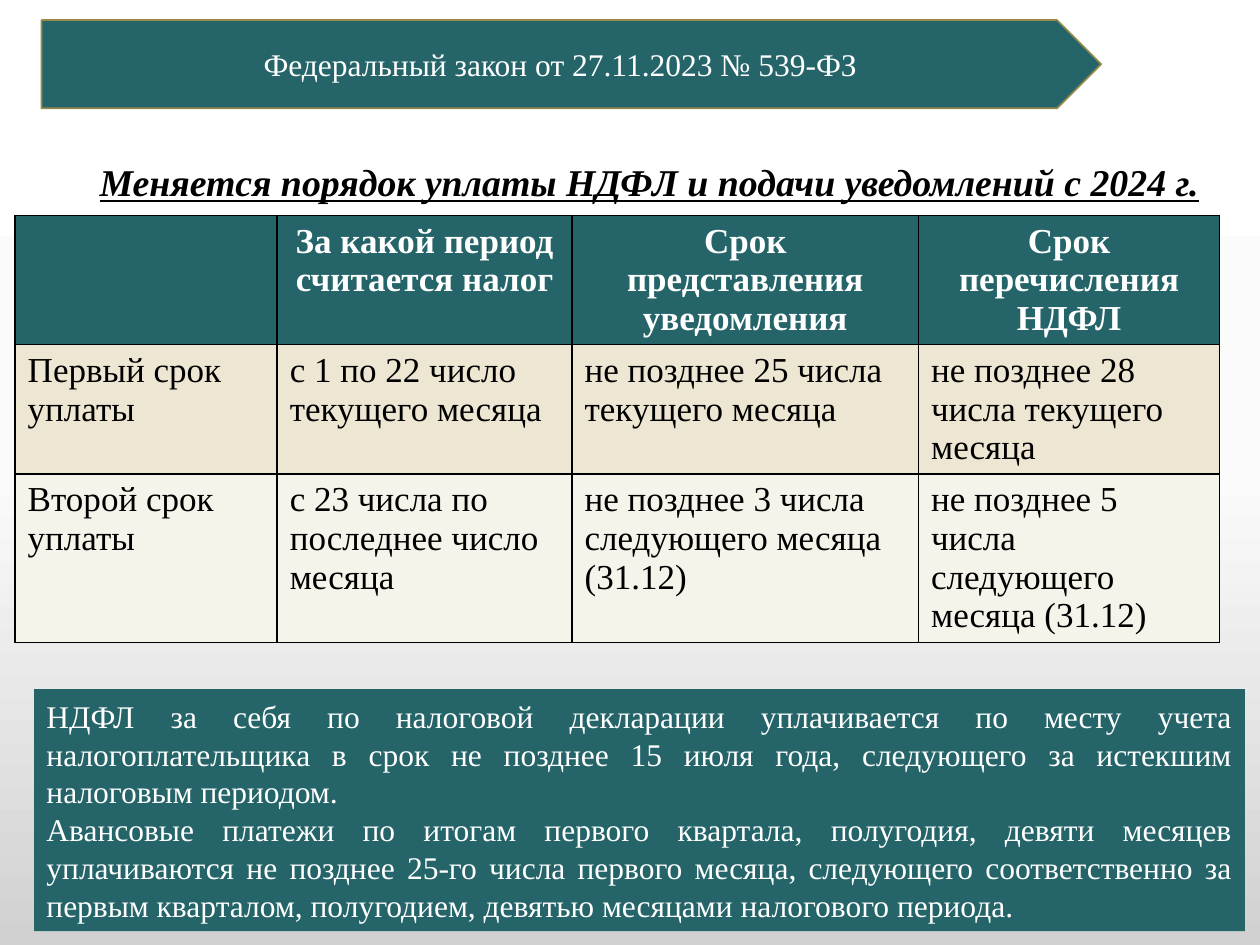
from copy import deepcopy

from pptx import Presentation
from pptx.dml.color import RGBColor
from pptx.enum.shapes import MSO_SHAPE as Shape
from pptx.enum.text import MSO_ANCHOR as Anchor, PP_ALIGN as Align
from pptx.oxml import parse_xml
from pptx.oxml.ns import nsdecls, qn
from pptx.util import Inches, Pt

FONT = "Times New Roman"
TEAL = "256569"
WHITE = "FFFFFF"
BLACK = "000000"
STOPS = [(0, WHITE), (0.5, "FBFBFB"), (1, "D1D1D1")]
COLS = [2.08, 2.34, 2.75, 2.39]
ROWS = [1.02, 1.02, 1.34]
FILLS = [TEAL, "EDE6D3", "F6F3EA"]
TERMS = [
    ["", "За какой период считается налог", "Срок представления уведомления",
     "Срок перечисления НДФЛ"],
    ["Первый срок уплаты", "с 1 по 22 число текущего месяца",
     "не позднее 25 числа текущего месяца",
     "не позднее 28 числа текущего месяца"],
    ["Второй срок уплаты", "с 23 числа по последнее число месяца",
     "не позднее 3 числа следующего месяца (31.12)",
     "не позднее 5 числа следующего месяца (31.12)"],
]
NOTES = [
    "НДФЛ за себя по налоговой декларации уплачивается по месту учета "
    "налогоплательщика в срок не позднее 15 июля года, следующего за истекшим "
    "налоговым периодом.",
    "Авансовые платежи по итогам первого квартала, полугодия, девяти месяцев "
    "уплачиваются не позднее 25-го числа первого месяца, следующего "
    "соответственно за первым кварталом, полугодием, девятью месяцами "
    "налогового периода.",
]


def color(code):
    return RGBColor.from_string(code)


def paint(item, code):
    item.fill.solid()
    item.fill.fore_color.rgb = color(code)


def write(frame, text, size, code, align, bold=False, fancy=False):
    frame.text = text
    for para in frame.paragraphs:
        para.alignment = align
        for run in para.runs:
            font = run.font
            font.name, font.size = FONT, Pt(size)
            font.bold, font.italic, font.underline = bold, fancy, fancy
            font.color.rgb = color(code)


def add_back(slide):
    fill = slide.background.fill
    fill.gradient()
    fill.gradient_angle = 270
    stops = next(slide.element.iter(qn("a:gsLst")))
    stops.append(deepcopy(stops[-1]))
    for stop, (place, code) in zip(fill.gradient_stops, STOPS):
        stop.position = place
        stop.color.rgb = color(code)


def add_title(slide, text):
    title = slide.shapes.title
    title.left, title.top = Inches(0.69), Inches(1.08)
    title.width, title.height = Inches(9.17), Inches(0.77)
    frame = title.text_frame
    frame.word_wrap = True
    frame.vertical_anchor = Anchor.MIDDLE
    write(frame, text, 21.6, BLACK, Align.LEFT, bold=True, fancy=True)
    frame.paragraphs[0].line_spacing = 0.9


def add_panel(slide, kind, box, text, align, edge=None):
    panel = slide.shapes.add_shape(kind, *map(Inches, box))
    panel.shadow.inherit = False
    paint(panel, TEAL)
    if edge:
        panel.line.color.rgb = color(edge)
        panel.line.width = Pt(1)
    else:
        panel.line.fill.background()
    panel.text_frame.word_wrap = True
    panel.text_frame.vertical_anchor = Anchor.MIDDLE
    write(panel.text_frame, text, 18, WHITE, align)


def add_edges(cell):
    props = cell._tc.get_or_add_tcPr()
    for spot, side in enumerate("LRTB"):
        props.insert(spot, parse_xml(
            f'<a:ln{side} {nsdecls("a")} w="12700"><a:solidFill>'
            f'<a:srgbClr val="{BLACK}"/></a:solidFill></a:ln{side}>'))


def add_grid(slide):
    box = map(Inches, (0.12, 1.71, sum(COLS), sum(ROWS)))
    grid = slide.shapes.add_table(len(ROWS), len(COLS), *box).table
    for col, width in zip(grid.columns, COLS):
        col.width = Inches(width)
    for row, high, fill, texts in zip(grid.rows, ROWS, FILLS, TERMS):
        row.height = Inches(high)
        head = fill == TEAL
        for cell, text in zip(row.cells, texts):
            paint(cell, fill)
            add_edges(cell)
            write(cell.text_frame, text, 20, WHITE if head else BLACK,
                  Align.CENTER if head else Align.LEFT, bold=head)


def main():
    deck = Presentation()
    deck.slide_width, deck.slide_height = Inches(10), Inches(7.5)
    slide = deck.slides.add_slide(deck.slide_layouts[5])
    add_back(slide)
    add_title(slide, "Меняется порядок уплаты НДФЛ и подачи уведомлений с 2024 г.")
    add_panel(slide, Shape.PENTAGON, (0.33, 0.16, 8.41, 0.7),
              "Федеральный закон от 27.11.2023 № 539-ФЗ", Align.CENTER, "98894B")
    add_grid(slide)
    add_panel(slide, Shape.RECTANGLE, (0.27, 5.47, 9.61, 1.92),
              "\n".join(NOTES), Align.JUSTIFY)
    deck.save("out.pptx")


if __name__ == "__main__":
    main()
